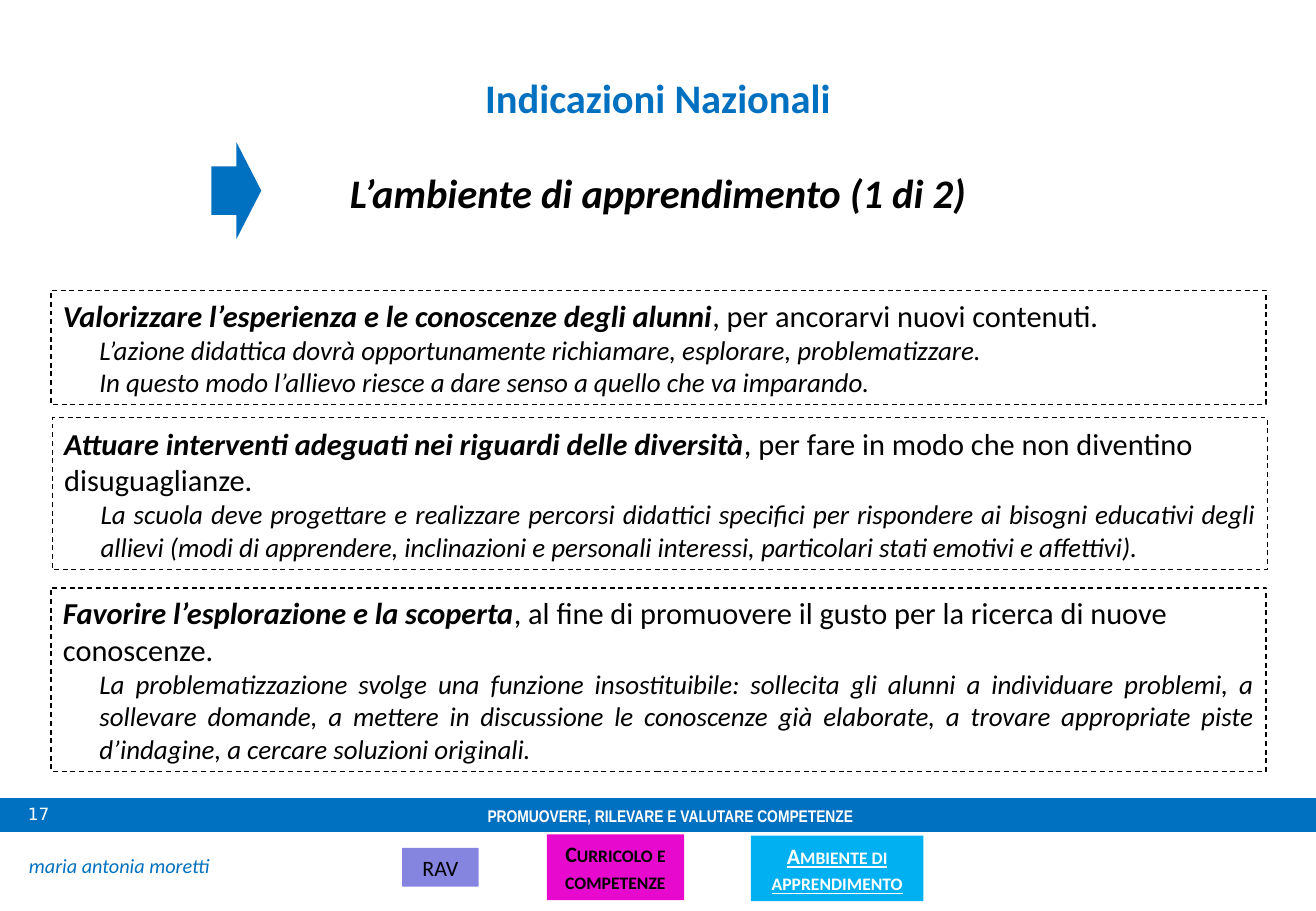
from dataclasses import dataclass
from pptx import Presentation
from pptx.dml.color import RGBColor
from pptx.enum import dml, shapes, text
from pptx.util import Inches, Pt

# Content
TITLE = "Indicazioni Nazionali"
TOPIC = "L’ambiente di apprendimento (1 di 2)"
# (left, top, height), lead, rest, details
PANELS = [
    ((0.42, 2.39, 0.94), "Valorizzare l’esperienza e le conoscenze degli alunni",
     ", per ancorarvi nuovi contenuti.",
     ["L’azione didattica dovrà opportunamente richiamare, esplorare, problematizzare.",
      "In questo modo l’allievo riesce a dare senso a quello che va imparando."]),
    ((0.43, 3.44, 1.25), "Attuare interventi adeguati nei riguardi delle diversità",
     ", per fare in modo che non diventino disuguaglianze.",
     ["La scuola deve progettare e realizzare percorsi didattici specifici per "
      "rispondere ai bisogni educativi degli allievi (modi di apprendere, "
      "inclinazioni e personali interessi, particolari stati emotivi e affettivi)."]),
    ((0.42, 4.84, 1.51), "Favorire l’esplorazione e la scoperta",
     ", al fine di promuovere il gusto per la ricerca di nuove conoscenze.",
     ["La problematizzazione svolge una funzione insostituibile: sollecita gli "
      "alunni a individuare problemi, a sollevare domande, a mettere in discussione "
      "le conoscenze già elaborate, a trovare appropriate piste d’indagine, a "
      "cercare soluzioni originali."]),
]


@dataclass(frozen=True)
class Theme:
    blue: str = "0070C0"
    sky: str = "00B0F0"
    pink: str = "E709CD"
    lilac: str = "8585E0"
    black: str = "000000"
    white: str = "FFFFFF"
    body: str = "Calibri"
    bar: str = "Arial Narrow"
    num: str = "DejaVu Sans"
    head: int = 24
    lead: int = 18
    note: int = 16
    tag: int = 13
    name: int = 12
    foot: int = 10


T = Theme()
WIDE = 10.83
ALIGN = text.PP_ALIGN
# text, place, fill, font colour, small caps, underline
TAGS = [
    ("Ambiente di apprendimento", (6.18, 6.88, 1.42, 0.54), T.sky, T.white, True, True),
    ("Curricolo e competenze", (4.5, 6.87, 1.13, 0.54), T.pink, T.black, True, False),
    ("RAV", (3.31, 6.98, 0.63, 0.32), T.lilac, T.black, False, False),
]


def style(para, size, color=T.black, face=T.body, bold=False, italic=False, align=ALIGN.LEFT):
    para.alignment = align
    font = para.font
    font.size, font.name, font.bold, font.italic = Pt(size), face, bold, italic
    font.color.rgb = RGBColor.from_string(color)


def block(place, fill=None, kind=shapes.MSO_SHAPE.RECTANGLE):
    item = slide.shapes.add_shape(kind, *map(Inches, place))
    item.shadow.inherit = False
    item.line.fill.background()
    if fill:
        item.fill.solid()
        item.fill.fore_color.rgb = RGBColor.from_string(fill)
    else:
        item.fill.background()
    item.text_frame.vertical_anchor = text.MSO_ANCHOR.MIDDLE
    return item


def label(words, place, size, pad=None, wrap=True, **look):
    frame = slide.shapes.add_textbox(*map(Inches, place)).text_frame
    frame.word_wrap = wrap
    if pad:
        frame.margin_left = frame.margin_right = Inches(pad[0])
        frame.margin_top = frame.margin_bottom = Inches(pad[1])
    frame.text = words
    style(frame.paragraphs[0], size, **look)


deck = Presentation()
deck.slide_width, deck.slide_height = Inches(WIDE), Inches(7.5)
slide = deck.slides.add_slide(deck.slide_layouts[5])

# Footer bar
block((0, 6.57, WIDE, 0.28), T.blue)
tight = (0.07, 0.04)
label("17", (0.16, 6.58, 0.38, 0.24), T.foot, tight, False, color=T.white, face=T.num)
label("PROMUOVERE, RILEVARE E VALUTARE COMPETENZE", (0.77, 6.59, 9.49, 0.24), T.foot,
      tight, color=T.white, face=T.bar, bold=True, align=ALIGN.CENTER)
label("maria antonia moretti", (0.14, 6.98, 1.73, 0.3), T.name, color=T.blue, italic=True)

# Section tags
for words, place, fill, color, caps, under in TAGS:
    frame = block(place, fill).text_frame
    frame.text = words
    para = frame.paragraphs[0]
    style(para, T.tag, color, bold=caps, align=ALIGN.CENTER)
    para.font.underline = under
    if caps:
        para.runs[0].font._element.set("cap", "small")

# Dashed panels
for (left, top, high), lead, rest, notes in PANELS:
    panel = block((left, top, 10, high))
    panel.line.color.rgb = RGBColor.from_string(T.black)
    panel.line.width = Pt(0.75)
    panel.line.dash_style = dml.MSO_LINE.DASH
    frame = panel.text_frame
    para = frame.paragraphs[0]
    style(para, T.lead)
    run = para.add_run()
    run.text = lead
    run.font.bold = run.font.italic = True
    para.add_run().text = rest
    for note in notes:
        para = frame.add_paragraph()
        para.text = note
        style(para, T.note, italic=True, align=ALIGN.JUSTIFY)
        para._p.get_or_add_pPr().set("marL", str(Inches(0.3)))

# Title, topic and arrow
title = slide.shapes.title
title.left, title.top, title.width, title.height = map(Inches, (0, 0.55, WIDE, 0.51))
title.text_frame.text = TITLE
title.text_frame.vertical_anchor = text.MSO_ANCHOR.TOP
title.text_frame.auto_size = text.MSO_AUTO_SIZE.NONE
style(title.text_frame.paragraphs[0], T.head, T.blue, bold=True, align=ALIGN.CENTER)
label(TOPIC, (0, 1.33, WIDE, 0.51), T.head, bold=True, italic=True, align=ALIGN.CENTER)
block((1.74, 1.17, 0.41, 0.8), T.blue, shapes.MSO_SHAPE.RIGHT_ARROW)

deck.save("out.pptx")
